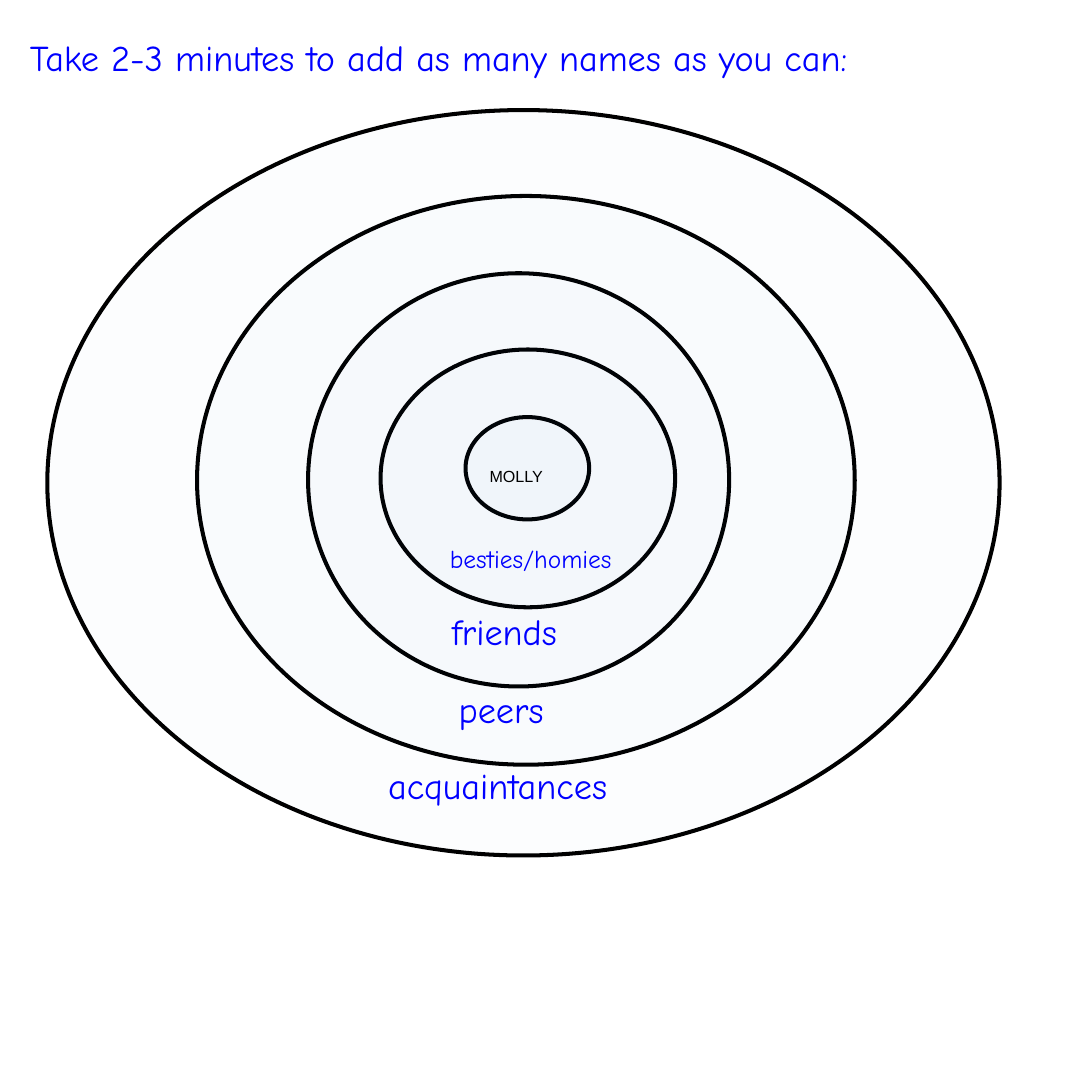
"""Build a slide of nested friendship circles with a label for each ring."""
from dataclasses import dataclass

from lxml.etree import SubElement
from pptx import Presentation
from pptx.dml.color import RGBColor
from pptx.enum.shapes import MSO_SHAPE as Shape
from pptx.enum.text import MSO_ANCHOR as Anchor, MSO_AUTO_SIZE as AutoSize, PP_ALIGN as Align
from pptx.oxml.ns import qn
from pptx.util import Inches, Pt

BLUE = "0000FF"
BLACK = "000000"
TINT = "4472C4"
TINT_OPACITY = 1000


@dataclass(frozen=True)
class Ring:
    left: float
    top: float
    width: float
    height: float


@dataclass(frozen=True)
class Label:
    text: str
    left: float
    top: float
    width: float
    height: float = 0.56
    size: int = 27
    font: str = "Comic Neue"
    colour: str = BLUE


TITLE = Label("Take 2-3 minutes to add as many names as you can:", 0.21, 0.32, 11.06)
RINGS = [
    Ring(4.82, 4.32, 1.28, 1.06),
    Ring(3.94, 3.62, 3.05, 2.67),
    Ring(3.19, 2.83, 4.36, 4.28),
    Ring(2.04, 2.03, 6.81, 5.89),
    Ring(0.49, 1.14, 9.86, 7.72),
]
LABELS = [
    Label("MOLLY", 4.97, 4.78, 1.08, 0.3, 12, "Arial", BLACK),
    Label("friends", 4.58, 6.26, 2.31),
    Label("peers", 4.65, 7.07, 1.92),
    Label("acquaintances", 3.92, 7.86, 3.81),
    Label("besties/homies", 4.56, 5.57, 3.03, 0.42, 19),
]


def rgb(colour: str) -> RGBColor:
    return RGBColor.from_string(colour)


def place(box, item: Ring | Label) -> None:
    box.left, box.top = Inches(item.left), Inches(item.top)
    box.width, box.height = Inches(item.width), Inches(item.height)


def write_label(box, label: Label) -> None:
    place(box, label)
    frame = box.text_frame
    frame.text = label.text
    frame.word_wrap = True
    frame.auto_size = AutoSize.SHAPE_TO_FIT_TEXT
    frame.vertical_anchor = Anchor.TOP
    frame.margin_left = frame.margin_right = Inches(0.1)
    frame.margin_top = frame.margin_bottom = Inches(0.05)
    para = frame.paragraphs[0]
    para.alignment = Align.LEFT
    para.line_spacing = 1.0
    para.space_before = Pt(0)
    para.font.name = label.font
    para.font.size = Pt(label.size)
    para.font.color.rgb = rgb(label.colour)


def draw_ring(page, ring: Ring) -> None:
    oval = page.shapes.add_shape(Shape.OVAL, 0, 0, 0, 0)
    place(oval, ring)
    oval.shadow.inherit = False
    oval.fill.solid()
    oval.fill.fore_color.rgb = rgb(TINT)
    tint = oval.fill._xPr.find(qn("a:solidFill"))[0]
    SubElement(tint, qn("a:alpha"), val=str(TINT_OPACITY))
    oval.line.color.rgb = rgb(BLACK)
    oval.line.width = Pt(3)


def main() -> None:
    deck = Presentation()
    deck.slide_width, deck.slide_height = Inches(11.11), Inches(11.31)
    page = deck.slides.add_slide(deck.slide_layouts.get_by_name("Title Only"))
    write_label(page.shapes.title, TITLE)
    for ring in RINGS:
        draw_ring(page, ring)
    for label in LABELS:
        write_label(page.shapes.add_textbox(0, 0, 0, 0), label)
    deck.save("out.pptx")


if __name__ == "__main__":
    main()
